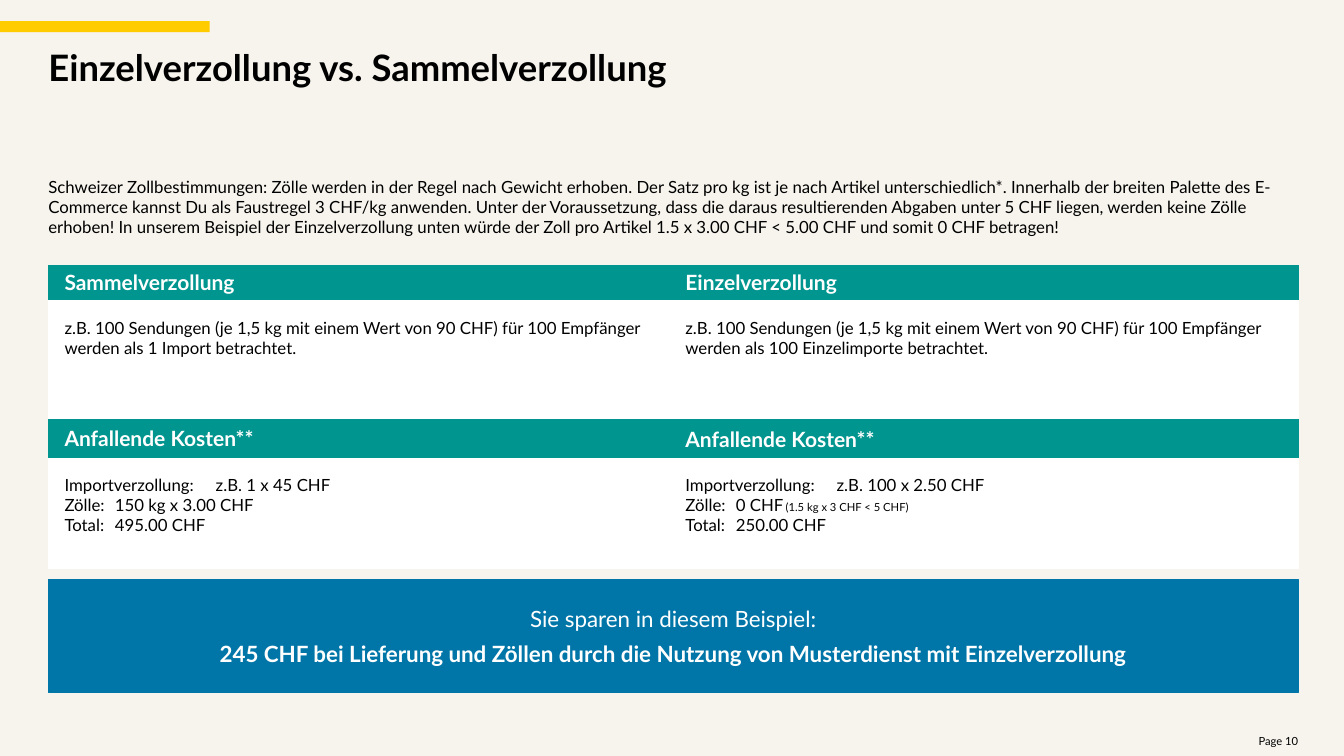
from dataclasses import dataclass

from lxml.etree import SubElement
from pptx import Presentation
from pptx.dml.color import RGBColor as Color
from pptx.enum.shapes import MSO_SHAPE as Shape
from pptx.enum.text import MSO_ANCHOR as Anchor, PP_ALIGN as Align
from pptx.oxml.ns import qn
from pptx.util import Inches, Pt


@dataclass(frozen=True)
class Theme:
    font: str = "Lato"
    paper: str = "F7F4ED"
    yellow: str = "FFCC00"
    teal: str = "00968F"
    blue: str = "0076A8"
    white: str = "FFFFFF"
    black: str = "000000"
    title: int = 26
    banner: int = 16
    header: int = 15
    body: int = 12
    small: int = 8
    tiny: int = 6


THEME = Theme()
WIDTH, HEIGHT = Inches(13.33), Inches(7.5)
MARGIN, CONTENT = 3.6, 93
COLUMNS = (46.2, 46.85)
ROWS = (4.8, 15.6, 5.2, 14.53)
SHIPMENT = "z.B. 100 Sendungen (je 1,5 kg mit einem Wert von 90 CHF) für 100 Empfänger werden als "
INTRO = (
    "Schweizer Zollbestimmungen: Zölle werden in der Regel nach Gewicht erhoben. "
    "Der Satz pro kg ist je nach Artikel unterschiedlich*. Innerhalb der breiten Palette "
    "des E-Commerce kannst Du als Faustregel 3 CHF/kg anwenden. Unter der Voraussetzung, "
    "dass die daraus resultierenden Abgaben unter 5 CHF liegen, werden keine Zölle erhoben! "
    "In unserem Beispiel der Einzelverzollung unten würde der Zoll pro Artikel "
    "1.5 x 3.00 CHF < 5.00 CHF und somit 0 CHF betragen!"
)


def across(percent):
    return int(WIDTH * percent / 100)


def down(percent):
    return int(HEIGHT * percent / 100)


def area(left, top, width, height):
    return across(left), down(top), across(width), down(height)


def write(paragraph, text, size=THEME.body, color=THEME.black, bold=False,
          align=None, spacing=None, after=None):
    run = paragraph.add_run()
    run.text = text
    run.font.name = THEME.font
    run.font.size = Pt(size)
    run.font.bold = bold
    run.font.color.rgb = Color.from_string(color)
    if align is not None:
        paragraph.alignment = align
    if spacing is not None:
        paragraph.line_spacing = spacing
    if after is not None:
        paragraph.space_after = Pt(after)


def set_insets(frame, inset):
    frame.margin_left = frame.margin_right = Inches(inset)
    frame.margin_top = frame.margin_bottom = Inches(inset)
    frame.word_wrap = True


def add_text(slide, place, text, **style):
    frame = slide.shapes.add_textbox(*place).text_frame
    set_insets(frame, 0)
    write(frame.paragraphs[0], text, **style)


def add_block(slide, place, color):
    block = slide.shapes.add_shape(Shape.RECTANGLE, *place)
    block.shadow.inherit = False
    block.fill.solid()
    block.fill.fore_color.rgb = Color.from_string(color)
    block.line.fill.background()
    return block


def set_borders(cell, **widths):
    properties = cell._tc.get_or_add_tcPr()
    for position, side in enumerate(("lnL", "lnR", "lnT", "lnB")):
        line = properties.makeelement(qn(f"a:{side}"), {})
        properties.insert(position, line)
        if side in widths:
            line.set("w", str(Pt(widths[side])))
            fill = SubElement(line, qn("a:solidFill"))
            SubElement(fill, qn("a:srgbClr"), val=THEME.white)
        else:
            SubElement(line, qn("a:noFill"))


def style_cell(cell, color, top_inset, **borders):
    cell.fill.solid()
    cell.fill.fore_color.rgb = Color.from_string(color)
    cell.margin_left = cell.margin_right = Inches(0.16)
    cell.margin_top, cell.margin_bottom = Inches(top_inset), Inches(0.05)
    set_borders(cell, **borders)


def fill_header(cell, text, border, anchor=Anchor.TOP, spacing=None):
    style_cell(cell, THEME.teal, 0.05, lnB=border)
    cell.vertical_anchor = anchor
    write(cell.text_frame.paragraphs[0], text, size=THEME.header,
          color=THEME.white, bold=True, spacing=spacing)


def fill_shipment(cell, result):
    style_cell(cell, THEME.white, 0.16, lnT=1)
    write(cell.text_frame.paragraphs[0], f"{SHIPMENT}{result} betrachtet.")


def set_tab(paragraph, stop):
    properties = paragraph._p.get_or_add_pPr()
    properties.set("marL", "0")
    properties.set("indent", str(Inches(-0.33)))
    tabs = SubElement(properties, qn("a:tabLst"))
    SubElement(tabs, qn("a:tab"), pos=str(Inches(stop)), algn="l")


def fill_costs(cell, stop, costs, note=None):
    style_cell(cell, THEME.white, 0.16, lnT=1, lnB=1)
    frame = cell.text_frame
    labels = ("Importverzollung: ", "Zölle:" if note else "Zölle: ", "Total: ")
    for index, (label, cost) in enumerate(zip(labels, costs)):
        paragraph = frame.add_paragraph() if index else frame.paragraphs[0]
        set_tab(paragraph, stop)
        write(paragraph, f"{label}\t{cost}")
    if note:
        write(frame.paragraphs[1], " ", size=THEME.tiny)
        write(frame.paragraphs[1], note, size=THEME.small)


def add_comparison(slide):
    place = area(MARGIN, 35.07, CONTENT, sum(ROWS))
    table = slide.shapes.add_table(len(ROWS), len(COLUMNS), *place).table
    table.first_row = table.horz_banding = False
    for column, width in zip(table.columns, COLUMNS):
        column.width = across(width)
    for row, height in zip(table.rows, ROWS):
        row.height = down(height)
    fill_header(table.cell(0, 0), "Sammelverzollung", 3)
    fill_header(table.cell(0, 1), "Einzelverzollung", 3)
    fill_shipment(table.cell(1, 0), "1 Import")
    fill_shipment(table.cell(1, 1), "100 Einzelimporte")
    for column, spacing in enumerate((0.95, None)):
        fill_header(table.cell(2, column), "Anfallende Kosten**", 1, Anchor.MIDDLE, spacing)
    fill_costs(table.cell(3, 0), 1.97, ("z.B. 1 x 45 CHF", "150 kg x 3.00 CHF", "495.00 CHF"))
    fill_costs(table.cell(3, 1), 2.06, ("z.B. 100 x 2.50 CHF", "0 CHF", "250.00 CHF"),
               note="(1.5 kg x 3 CHF < 5 CHF)")


def add_banner(slide):
    banner = add_block(slide, area(MARGIN, 76.67, CONTENT, 14.93), THEME.blue)
    banner.line.color.rgb = Color.from_string(THEME.blue)
    banner.line.width = Pt(0.75)
    frame = banner.text_frame
    set_insets(frame, 0.08)
    frame.vertical_anchor = Anchor.MIDDLE
    style = dict(size=THEME.banner, color=THEME.white, align=Align.CENTER)
    write(frame.paragraphs[0], "Sie sparen in diesem Beispiel:", after=6, **style)
    write(frame.add_paragraph(), "245 CHF bei Lieferung und Zöllen durch die Nutzung "
          "von Musterdienst mit Einzelverzollung", bold=True, **style)


def main():
    presentation = Presentation()
    presentation.slide_width, presentation.slide_height = WIDTH, HEIGHT
    slide = presentation.slides.add_slide(presentation.slide_layouts[6])
    slide.background.fill.solid()
    slide.background.fill.fore_color.rgb = Color.from_string(THEME.paper)
    add_block(slide, area(0, 2.8, 15.6, 1.47), THEME.yellow)
    add_text(slide, area(MARGIN, 6.4, CONTENT, 10.8), "Einzelverzollung vs. Sammelverzollung",
             size=THEME.title, bold=True, spacing=Pt(29))
    add_comparison(slide)
    add_banner(slide)
    add_text(slide, area(MARGIN, 23.33, CONTENT, 8.13), INTRO)
    add_text(slide, area(91.6, 97.07, 5, 1.87), "Page 10", size=THEME.small, align=Align.RIGHT)
    presentation.save("out.pptx")


if __name__ == "__main__":
    main()
